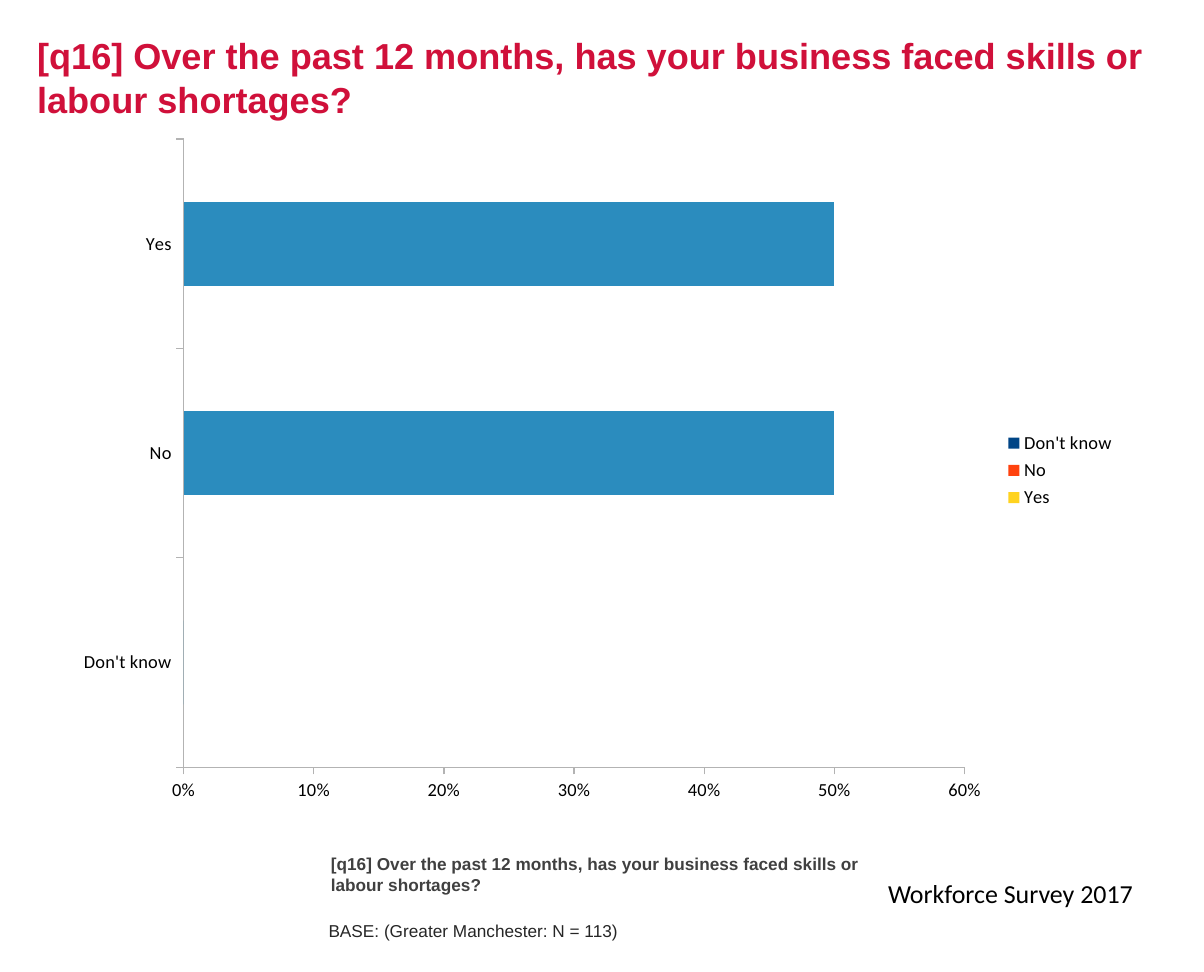
from pptx import Presentation
from pptx.chart.data import CategoryChartData as Data
from pptx.dml.color import RGBColor as RGB
from pptx.enum.chart import XL_CHART_TYPE as Kind, XL_LEGEND_POSITION as Side, XL_TICK_MARK as Tick
from pptx.enum.text import MSO_ANCHOR as Anchor, PP_ALIGN as Align
from pptx.util import Pt

RED = RGB(0xD0, 0x10, 0x3A)
BLUE = RGB(0x2B, 0x8C, 0xBE)
BLACK = RGB(0, 0, 0)
DARK = RGB(0x26, 0x26, 0x26)
GREY = RGB(0x40, 0x40, 0x40)
LINE = RGB(0xB3, 0xB3, 0xB3)

ASK = ("[q16] Over the past 12 months, has your business faced "
       "skills or labour shortages?")


def place(shape, box):
    shape.left, shape.top, shape.width, shape.height = map(Pt, box)


def write(shape, text, size, color, face="Arial", bold=False, anchor=Anchor.TOP):
    frame = shape.text_frame
    frame.word_wrap = True
    frame.vertical_anchor = anchor
    frame.text = text
    para = frame.paragraphs[0]
    para.alignment = Align.LEFT
    font = para.font
    font.name, font.size, font.bold = face, Pt(size), bold
    font.color.rgb = color


def add_title(slide, text):
    title = slide.shapes.title
    place(title, (15, 14.4, 685, 63.4))
    write(title, text, 21.6, RED, bold=True, anchor=Anchor.MIDDLE)


def add_note(slide, box, text, size, color, **form):
    note = slide.shapes.add_textbox(*map(Pt, box))
    write(note, text, size, color, **form)


def style_axis(axis):
    axis.has_major_gridlines = False
    axis.major_tick_mark = Tick.OUTSIDE
    axis.minor_tick_mark = Tick.NONE
    axis.format.line.color.rgb = LINE
    axis.format.line.width = Pt(0.75)


def add_bars(slide, box):
    data = Data(number_format="0%")
    data.categories = ["Don't know", "No", "Yes"]
    data.add_series("Greater Manchester", (0, 0.5, 0.5))
    chart = slide.shapes.add_chart(Kind.BAR_CLUSTERED, *map(Pt, box), data).chart
    chart.has_title = False
    chart.font.name, chart.font.size = "Calibri", Pt(11)
    chart.font.color.rgb = BLACK

    for axis in (chart.category_axis, chart.value_axis):
        style_axis(axis)
    labels = chart.value_axis.tick_labels
    labels.number_format, labels.number_format_is_linked = "0%", False

    plot = chart.plots[0]
    plot.gap_width = 150
    plot.vary_by_categories = True
    fill = plot.series[0].format.fill
    fill.solid()
    fill.fore_color.rgb = BLUE

    chart.has_legend = True
    chart.legend.position = Side.RIGHT
    chart.legend.include_in_layout = False


def main():
    deck = Presentation()
    deck.slide_width, deck.slide_height = Pt(720), Pt(581)
    slide = deck.slides.add_slide(deck.slide_layouts[5])
    add_title(slide, ASK)
    add_note(slide, (524, 521.3, 175, 26), "Workforce Survey 2017", 15.5, BLACK,
             face="Calibri")
    add_note(slide, (190.8, 512, 331.2, 26.6), ASK, 10.3, GREY, bold=True,
             anchor=Anchor.BOTTOM)
    add_note(slide, (189.4, 538.6, 331.2, 27.4), "BASE: (Greater Manchester: N = 113)",
             10.3, DARK, anchor=Anchor.BOTTOM)
    add_bars(slide, (37.4, 74.9, 637.2, 412.6))
    deck.save("out.pptx")


if __name__ == "__main__":
    main()
